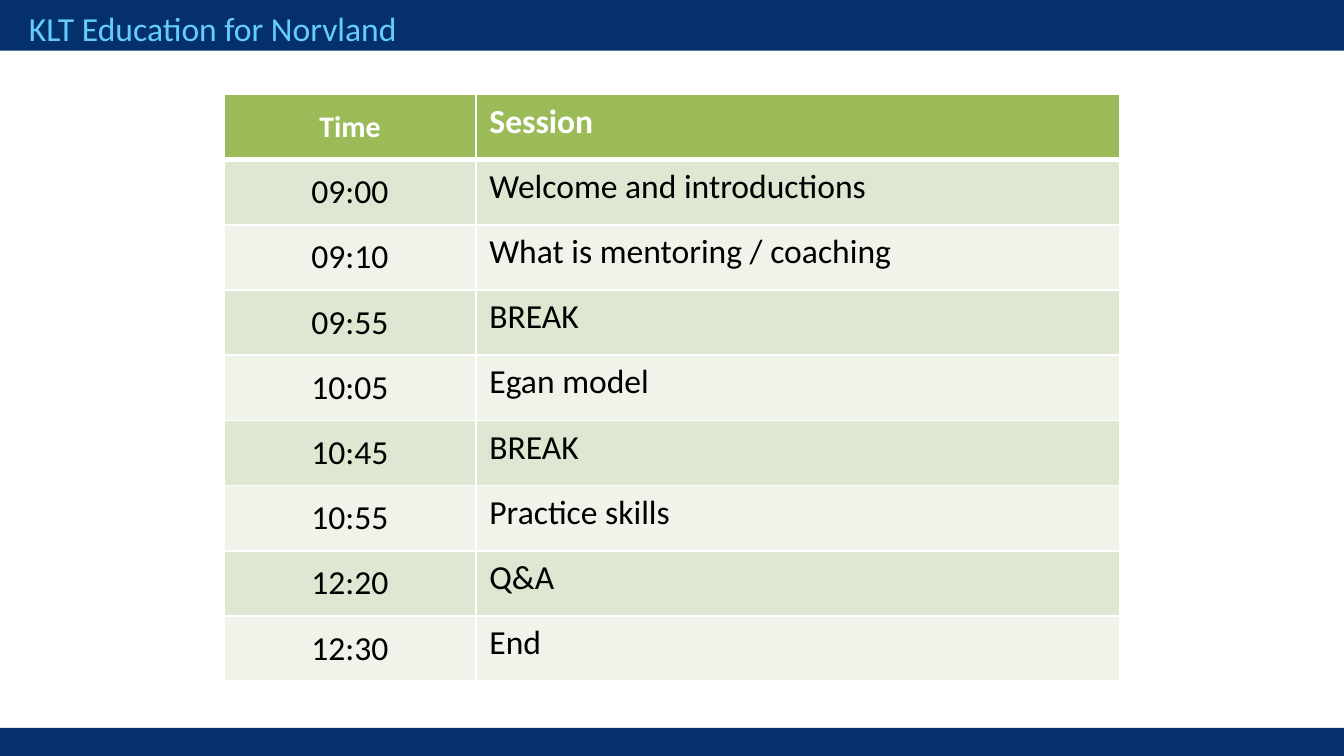
from typing import NamedTuple

import lxml.etree
import pptx
import pptx.dml.color
import pptx.enum.shapes
import pptx.enum.text
import pptx.oxml.ns
import pptx.util

Pt = pptx.util.Pt
SLIDE_WIDTH, SLIDE_HEIGHT = 720, 405
FONT = "Calibri"
NAVY, SKY, WHITE, BLACK = "04306C", "66CCFF", "FFFFFF", "000000"
HEADER_GREEN = "9BBB59"
BAND_GREENS = ("DEE7D1", "EFF3EA")
COLUMN_WIDTHS = (135, 345)
ROW_HEIGHT = 34.95
AGENDA_LEFT, AGENDA_TOP = 120, 50.6


class Band(NamedTuple):
    top: float
    height: float


class Session(NamedTuple):
    time: str
    title: str


BANDS = (Band(0, 27.2), Band(390, 15))
AGENDA = (
    Session("Time", "Session"),
    Session("09:00", "Welcome and introductions"),
    Session("09:10", "What is mentoring / coaching"),
    Session("09:55", "BREAK"),
    Session("10:05", "Egan model"),
    Session("10:45", "BREAK"),
    Session("10:55", "Practice skills"),
    Session("12:20", "Q&A"),
    Session("12:30", "End"),
)


def rgb(colour: str) -> pptx.dml.color.RGBColor:
    return pptx.dml.color.RGBColor.from_string(colour)


def style_text(paragraph, size: float, colour: str, bold: bool = False) -> None:
    for run in paragraph.runs:
        run.font.name = FONT
        run.font.size = Pt(size)
        run.font.bold = bold
        run.font.color.rgb = rgb(colour)


def draw_band(slide, band: Band) -> None:
    bar = slide.shapes.add_shape(
        pptx.enum.shapes.MSO_SHAPE.RECTANGLE,
        Pt(0), Pt(band.top), Pt(SLIDE_WIDTH), Pt(band.height),
    )
    bar.shadow.inherit = False
    bar.fill.solid()
    bar.fill.fore_color.rgb = rgb(NAVY)
    bar.line.fill.background()


def draw_organisation(slide, name: str) -> None:
    heading = slide.shapes.add_textbox(Pt(8.4), Pt(0.9), Pt(306), Pt(29))
    heading.text_frame.word_wrap = True
    heading.text_frame.text = name
    style_text(heading.text_frame.paragraphs[0], 18, SKY)


def add_borders(cell, top: float, bottom: float) -> None:
    """Add white borders; call before filling, as lines precede the fill in the XML."""
    qn = pptx.oxml.ns.qn
    properties = cell._tc.get_or_add_tcPr()
    for side, width in (("L", 1), ("R", 1), ("T", top), ("B", bottom)):
        line = lxml.etree.SubElement(properties, qn(f"a:ln{side}"), w=str(int(Pt(width))))
        fill = lxml.etree.SubElement(line, qn("a:solidFill"))
        lxml.etree.SubElement(fill, qn("a:srgbClr"), val=WHITE)


def draw_agenda(slide, sessions: tuple[Session, ...]) -> None:
    agenda = slide.shapes.add_table(
        len(sessions), len(COLUMN_WIDTHS), Pt(AGENDA_LEFT), Pt(AGENDA_TOP),
        Pt(sum(COLUMN_WIDTHS)), Pt(ROW_HEIGHT * len(sessions)),
    ).table
    for column, width in zip(agenda.columns, COLUMN_WIDTHS):
        column.width = Pt(width)
    for index, session in enumerate(sessions):
        agenda.rows[index].height = Pt(ROW_HEIGHT)
        is_header = index == 0
        background = HEADER_GREEN if is_header else BAND_GREENS[(index - 1) % 2]
        for cell, wording in zip(agenda.rows[index].cells, session):
            cell.text_frame.text = wording
            add_borders(cell, top=3 if index == 1 else 1, bottom=3 if is_header else 1)
            cell.fill.solid()
            cell.fill.fore_color.rgb = rgb(background)
            style_text(cell.text_frame.paragraphs[0], 18, WHITE if is_header else BLACK, is_header)
        time_cell = agenda.cell(index, 0)
        time_cell.vertical_anchor = pptx.enum.text.MSO_ANCHOR.MIDDLE
        time_cell.text_frame.paragraphs[0].alignment = pptx.enum.text.PP_ALIGN.CENTER
    style_text(agenda.cell(0, 0).text_frame.paragraphs[0], 16, WHITE, True)


def main() -> None:
    presentation = pptx.Presentation()
    presentation.slide_width = Pt(SLIDE_WIDTH)
    presentation.slide_height = Pt(SLIDE_HEIGHT)
    slide = presentation.slides.add_slide(presentation.slide_layouts[6])
    for band in BANDS:
        draw_band(slide, band)
    draw_organisation(slide, "KLT Education for Norvland")
    draw_agenda(slide, AGENDA)
    presentation.save("out.pptx")


if __name__ == "__main__":
    main()
